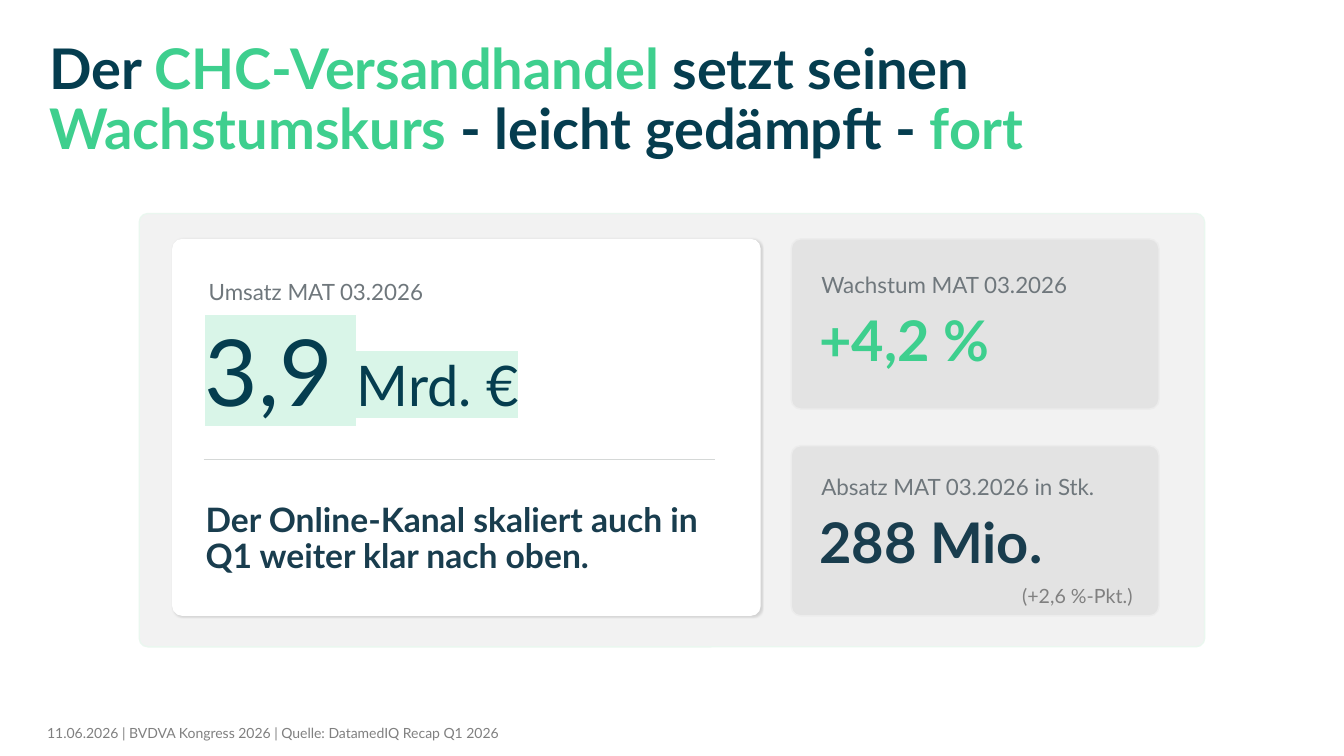
from dataclasses import dataclass

from lxml import etree
from pptx import Presentation
from pptx import util as u
from pptx.dml import color
from pptx.enum import shapes, text
from pptx.oxml import ns


@dataclass(frozen=True)
class Theme:
    font: str = "Lato"
    # Colours
    petrol: str = "053D4F"
    ink: str = "193D4E"
    green: str = "3ECF8E"
    mint: str = "D9F5E8"
    label_grey: str = "6F777C"
    note_grey: str = "808080"
    white: str = "FFFFFF"
    panel: str = "F2F2F2"
    panel_edge: str = "EAF7EF"
    card: str = "606060"
    card_edge: str = "ECECEC"
    rule: str = "D5D8D7"
    # Type sizes in points
    hero: int = 66
    large: int = 40
    message: int = 24
    label: int = 16
    note: int = 14
    footer: int = 10


THEME = Theme()


def rgb(value):
    return color.RGBColor.from_string(value)


def add_element(parent, tag, **attributes):
    return etree.SubElement(parent, ns.qn(tag), attributes)


def add_run(paragraph, content, size, colour, bold=False, highlight=None):
    run = paragraph.add_run()
    run.text = content
    run.font.name = THEME.font
    run.font.size = u.Pt(size)
    run.font.bold = bold
    run.font.color.rgb = rgb(colour)
    if highlight:
        properties = run.font._element
        mark = add_element(properties, "a:highlight")
        add_element(mark, "a:srgbClr", val=highlight)
        properties.find(ns.qn("a:latin")).addprevious(mark)


def add_text(slide, box, runs, inset=False, spacing=None, align=None):
    """Place one paragraph; without insets it is centred vertically."""
    shape = slide.shapes.add_textbox(*map(u.Cm, box))
    frame = shape.text_frame
    frame.word_wrap = True
    if not inset:
        frame.margin_left = frame.margin_right = 0
        frame.margin_top = frame.margin_bottom = 0
        frame.vertical_anchor = text.MSO_ANCHOR.MIDDLE
    paragraph = frame.paragraphs[0]
    paragraph.line_spacing = spacing
    paragraph.alignment = align
    for run in runs:
        add_run(paragraph, *run)


def add_panel(slide, box, radius, fill, edge=None, opacity=None):
    shape = slide.shapes.add_shape(
        shapes.MSO_SHAPE.ROUNDED_RECTANGLE, *map(u.Cm, box))
    shape.adjustments[0] = radius
    shape.shadow.inherit = False
    shape.fill.solid()
    shape.fill.fore_color.rgb = rgb(fill)
    if opacity:
        fill_colour = shape._element.spPr.find(
            f"{ns.qn('a:solidFill')}/{ns.qn('a:srgbClr')}")
        add_element(fill_colour, "a:alpha", val=str(opacity * 1000))
    if edge:
        shape.line.color.rgb = rgb(edge)
        shape.line.width = u.Pt(1)
    else:
        shape.line.fill.background()
    return shape


def add_soft_shadow(shape):
    effects = shape._element.spPr.find(ns.qn("a:effectLst"))
    shadow = add_element(
        effects, "a:outerShdw", blurRad=str(u.Pt(1.5)), dist=str(u.Pt(1)),
        dir=str(45 * 60000), algn="tl", rotWithShape="0")
    shadow_colour = add_element(shadow, "a:srgbClr", val="000000")
    add_element(shadow_colour, "a:alpha", val="12000")


def add_rule(slide, left, right, top):
    line = slide.shapes.add_connector(
        shapes.MSO_CONNECTOR.STRAIGHT, *map(u.Cm, (left, top, right, top)))
    line.line.color.rgb = rgb(THEME.rule)
    line.line.width = u.Pt(1.2)
    add_element(line._element.spPr, "a:effectLst")


def add_metric_card(slide, top, label, label_box, value, value_box, colour):
    add_panel(slide, (19.94, top, 9.27, 4.29), 0.057, THEME.card,
              THEME.card_edge, opacity=10)
    add_text(slide, label_box, [(label, THEME.label, THEME.label_grey)])
    add_text(slide, value_box, [(value, THEME.large, colour, True)])


def add_title(slide):
    parts = [
        ("Der ", THEME.petrol),
        ("CHC-Versandhandel ", THEME.green),
        ("setzt seinen ", THEME.petrol),
        ("Wachstumskurs ", THEME.green),
        ("- leicht gedämpft - ", THEME.petrol),
        ("fort", THEME.green),
    ]
    runs = [(content, THEME.large, colour, True) for content, colour in parts]
    add_text(slide, (0.99, 0.91, 31.42, 3), runs, inset=True, spacing=0.9)


def add_revenue_card(slide):
    add_soft_shadow(
        add_panel(slide, (4.34, 6.02, 14.83, 9.5), 0.026, THEME.white))
    add_text(slide, (5.26, 6.99, 7.14, 0.71),
             [("Umsatz MAT 03.2026", THEME.label, THEME.label_grey)])
    add_text(slide, (5.16, 7.85, 12.57, 2.92), [
        ("3,9 ", THEME.hero, THEME.petrol, False, THEME.mint),
        ("Mrd. €", THEME.large, THEME.petrol, False, THEME.mint),
    ])
    add_rule(slide, 5.13, 18.03, 11.58)
    message = "Der Online-Kanal skaliert auch in Q1 weiter klar nach oben."
    add_text(slide, (5.18, 12.65, 12.42, 1.88),
             [(message, THEME.message, THEME.ink, True)], spacing=0.9)


def main():
    presentation = Presentation()
    presentation.slide_width = u.Cm(33.87)
    presentation.slide_height = u.Cm(19.05)
    slide = presentation.slides.add_slide(presentation.slide_layouts[6])

    # Title and footer
    add_title(slide)
    footer = "11.06.2026 | BVDVA Kongress 2026 | Quelle: DatamedIQ Recap Q1 2026"
    add_text(slide, (0.94, 18.14, 31.42, 0.69),
             [(footer, THEME.footer, THEME.note_grey)], inset=True)

    # Backdrop and revenue
    add_panel(slide, (3.51, 5.38, 26.85, 10.92), 0.02, THEME.panel,
              THEME.panel_edge)
    add_revenue_card(slide)

    # Growth and volume
    add_metric_card(slide, 6.02, "Wachstum MAT 03.2026",
                    (20.7, 6.76, 9.58, 0.84), "+4,2 %",
                    (20.65, 7.8, 6.6, 1.47), THEME.green)
    add_metric_card(slide, 11.23, "Absatz MAT 03.2026 in Stk.",
                    (20.7, 11.96, 8.51, 0.61), "288 Mio.",
                    (20.65, 12.95, 7.39, 1.37), THEME.ink)
    add_text(slide, (25.5, 14.6, 3.43, 0.84),
             [("(+2,6 %-Pkt.) ", THEME.note, THEME.note_grey)],
             inset=True, align=text.PP_ALIGN.CENTER)

    presentation.save("out.pptx")


if __name__ == "__main__":
    main()
